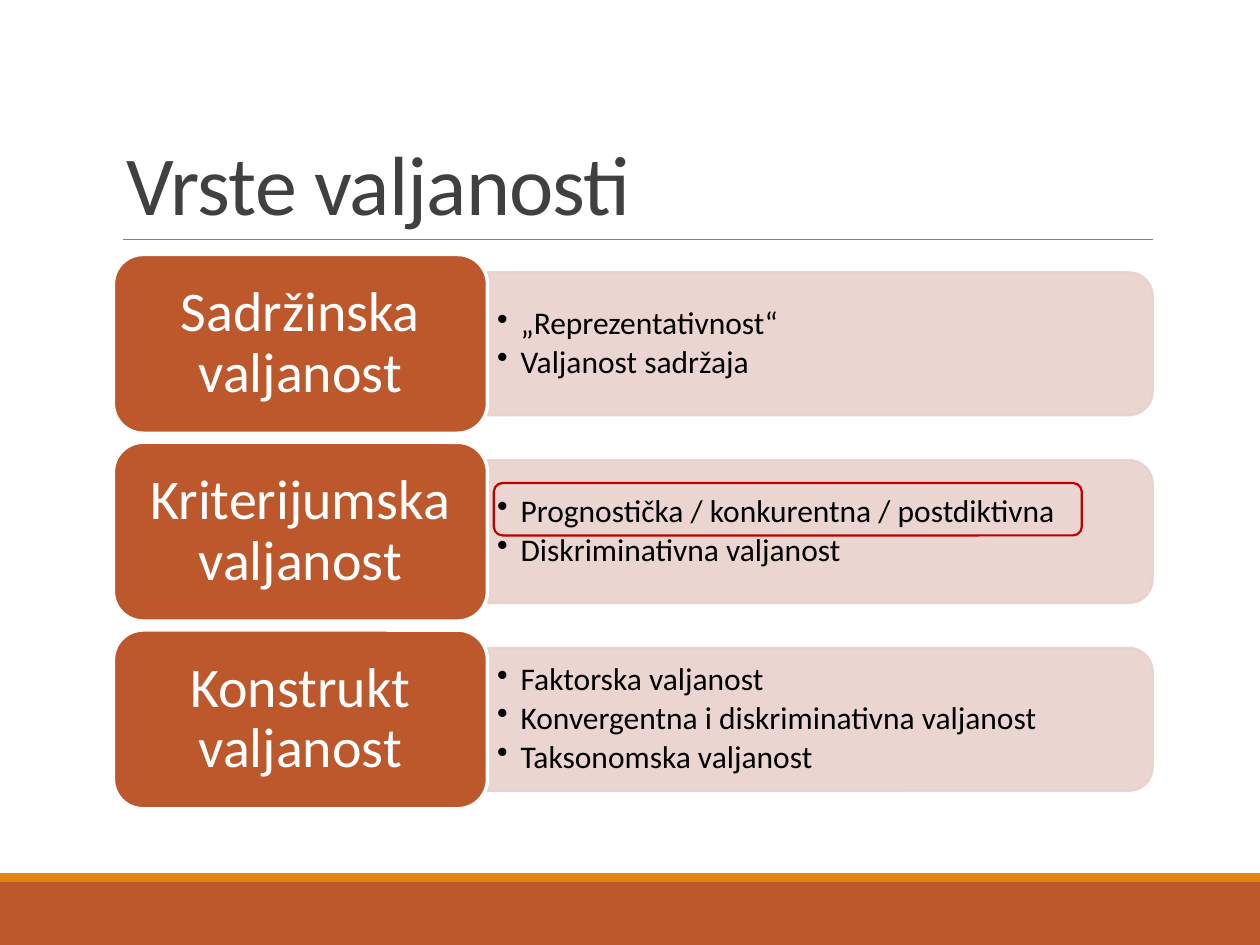
"""Build the slide "Vrste valjanosti" with three labelled bullet panels."""
from dataclasses import dataclass

import lxml.etree
import pptx
import pptx.dml.color
import pptx.enum.shapes
import pptx.enum.text
import pptx.oxml.ns
import pptx.util

Pt = pptx.util.Pt
SHAPES = pptx.enum.shapes.MSO_SHAPE
ANCHOR = pptx.enum.text.MSO_ANCHOR
qn = pptx.oxml.ns.qn


@dataclass(frozen=True)
class Theme:
    font: str = "Calibri"
    rust: str = "BD582C"
    orange: str = "E48312"
    panel: str = "E8D1CD"
    rule: str = "808080"
    title: str = "404040"
    body: str = "000000"
    white: str = "FFFFFF"
    highlight: str = "C00000"
    title_size: int = 48
    label_size: int = 32
    body_size: int = 18


theme = Theme()


def add_box(kind, left, top, width, height, fill=None, line=None, line_width=0):
    shape = slide.shapes.add_shape(kind, Pt(left), Pt(top), Pt(width), Pt(height))
    shape.shadow.inherit = False
    for part, color in ((shape.fill, fill), (shape.line.fill, line)):
        if color:
            part.solid()
            part.fore_color.rgb = pptx.dml.color.RGBColor.from_string(color)
        else:
            part.background()
    if line:
        shape.line.width = Pt(line_width)
    return shape


def style_paragraph(paragraph, size, color, spacing):
    paragraph.font.name = theme.font
    paragraph.font.size = Pt(size)
    paragraph.font.color.rgb = pptx.dml.color.RGBColor.from_string(color)
    paragraph.line_spacing = spacing


presentation = pptx.Presentation()
presentation.slide_width, presentation.slide_height = Pt(720), Pt(540)
slide = presentation.slides.add_slide(presentation.slide_layouts[5])

add_box(SHAPES.RECTANGLE, 0, 504, 720, 36, theme.rust)
add_box(SHAPES.RECTANGLE, 0, 499, 720, 5, theme.orange)

rule = slide.shapes.add_connector(
    pptx.enum.shapes.MSO_CONNECTOR.STRAIGHT, Pt(70.5), Pt(136.8), Pt(658.8), Pt(136.8))
rule.line.color.rgb = pptx.dml.color.RGBColor.from_string(theme.rule)
rule.line.width = Pt(0.5)
lxml.etree.SubElement(rule._element.spPr, qn("a:effectLst"))

title = slide.shapes.title
title.left, title.top, title.width, title.height = Pt(64.8), Pt(22.6), Pt(594), Pt(114.2)
title.text_frame.text = "Vrste valjanosti"
title.text_frame.auto_size = pptx.enum.text.MSO_AUTO_SIZE.NONE
title.text_frame.vertical_anchor = ANCHOR.BOTTOM
heading = title.text_frame.paragraphs[0]
heading.alignment = pptx.enum.text.PP_ALIGN.LEFT
style_paragraph(heading, theme.title_size, theme.title, 0.85)
heading.runs[0].font._element.set("spc", "-50")

kinds = [
    ("Sadržinska valjanost", ["„Reprezentativnost“", "Valjanost sadržaja"]),
    ("Kriterijumska valjanost",
     ["Prognostička / konkurentna / postdiktivna", "Diskriminativna valjanost"]),
    ("Konstrukt valjanost",
     ["Faktorska valjanost", "Konvergentna i diskriminativna valjanost",
      "Taksonomska valjanost"]),
]
label_left, label_width, label_height = 64.8, 213.8, 102.2
panel_left, panel_width, panel_height = 278.6, 380.1, 81.7
first_top, row_pitch = 145.4, 107.3

for row, (name, bullets) in enumerate(kinds):
    top = first_top + row * row_pitch
    middle = top + label_height / 2

    panel = add_box(
        SHAPES.ROUND_2_SAME_RECTANGLE,
        panel_left + (panel_width - panel_height) / 2, middle - panel_width / 2,
        panel_height, panel_width, theme.panel, theme.panel, 1.25)
    panel.rotation = 90
    for color in panel._element.spPr.iter(qn("a:srgbClr")):
        lxml.etree.SubElement(color, qn("a:alpha"), val="90000")

    details = slide.shapes.add_textbox(
        Pt(panel_left), Pt(middle - 36.7), Pt(375.8), Pt(73.4)).text_frame
    details.word_wrap = True
    details.vertical_anchor = ANCHOR.MIDDLE
    details.margin_left = details.margin_right = Pt(5.4)
    details.margin_top = details.margin_bottom = Pt(2.7)
    details.text = "\n".join(bullets)
    for paragraph in details.paragraphs:
        style_paragraph(paragraph, theme.body_size, theme.body, 0.9)
        paragraph.space_after = Pt(2.7)
        properties = paragraph._p.get_or_add_pPr()
        properties.set("marL", str(Pt(13.5)))
        properties.set("indent", str(Pt(-13.5)))
        bullet = properties.makeelement(qn("a:buChar"), {"char": "•"})
        properties.find(qn("a:defRPr")).addprevious(bullet)

    label = add_box(SHAPES.ROUNDED_RECTANGLE, label_left, top, label_width, label_height,
                    theme.rust, theme.white, 2).text_frame
    label.word_wrap = True
    label.vertical_anchor = ANCHOR.MIDDLE
    label.margin_left = label.margin_right = Pt(9.6)
    label.margin_top = label.margin_bottom = Pt(4.8)
    label.text = name
    label.paragraphs[0].alignment = pptx.enum.text.PP_ALIGN.CENTER
    style_paragraph(label.paragraphs[0], theme.label_size, theme.white, 0.9)

add_box(SHAPES.ROUNDED_RECTANGLE, 282.2, 276, 336, 30, line=theme.highlight, line_width=1.25)

presentation.save("out.pptx")
